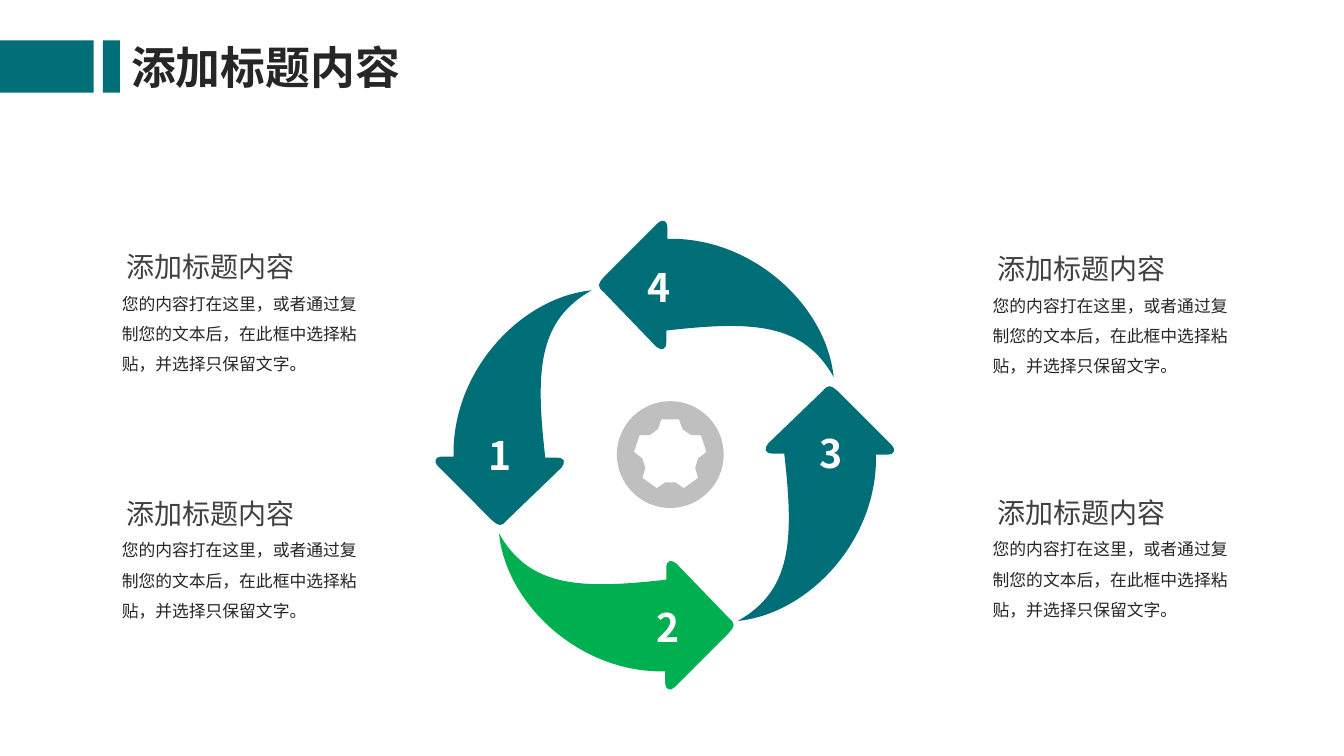
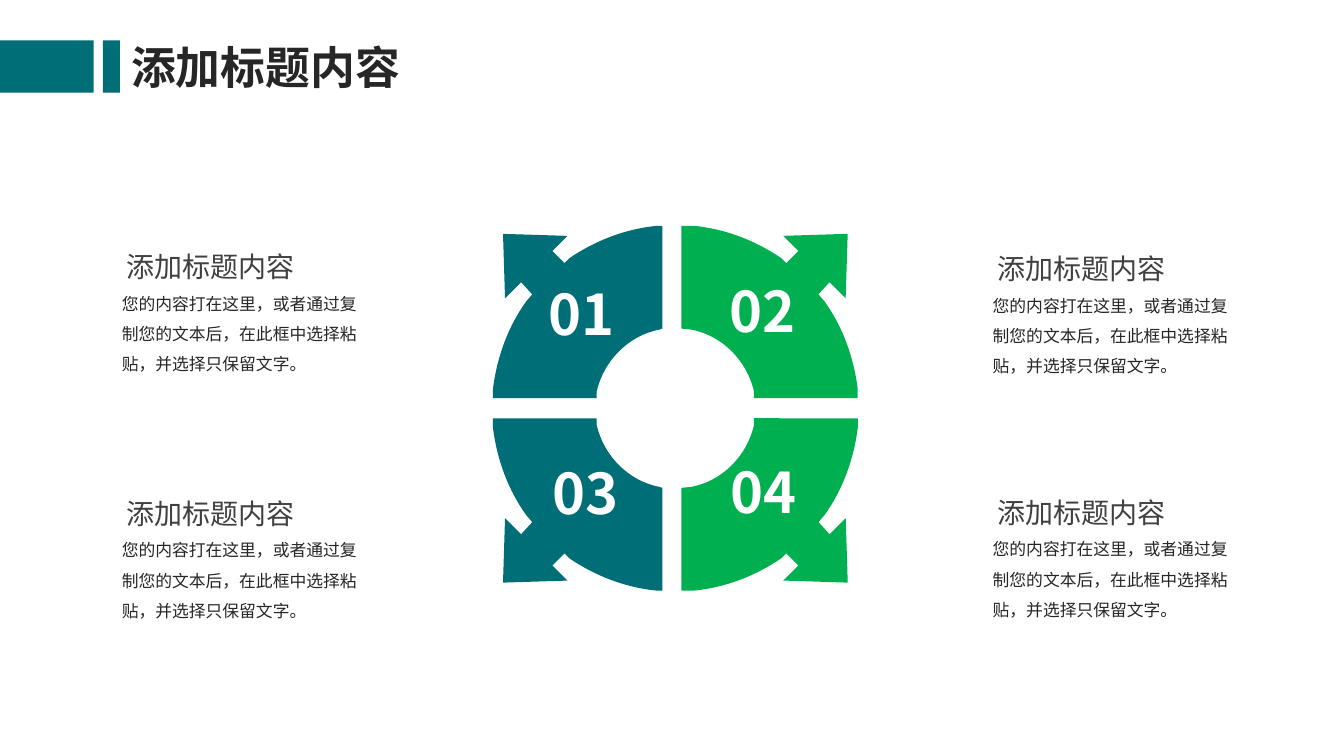
"""Build two four-part cycle slides: swirling arrows and a quartered ring."""
from math import cos, radians, sin

from lxml import etree
from pptx import Presentation
from pptx.dml.color import RGBColor
from pptx.enum.shapes import MSO_SHAPE
from pptx.enum.text import MSO_ANCHOR, PP_ALIGN
from pptx.oxml.ns import qn
from pptx.util import Inches, Pt

COLORS = {"teal": "006E77", "green": "00B050", "gray": "BFBFBF",
          "title": "262626", "heading": "404040", "white": "FFFFFF"}
CJK_FONT, BODY_FONT = "Noto Sans CJK JP", "Arial"

TITLE = "添加标题内容"
HEADING = "添加标题内容"
BODY = "您的内容打在这里，或者通过复制您的文本后，在此框中选择粘贴，并选择只保留文字。"
BANDS = [(0, 0.93), (1.02, 0.17)]
NOTES = [(1.11, 2.26), (1.11, 4.71), (9.75, 2.28), (9.75, 4.7)]

# A step with one point is a line; a step with three points is a curve.
SWIRL = [
    [(0, 0)],
    [(-0.7, 0.07), (-1.39, 0.8), (-1.37, 1.65)],
    [(-1.49, 1.65)],
    [(-1.55, 1.65), (-1.57, 1.7), (-1.53, 1.74)],
    [(-0.99, 2.28)],
    [(-0.92, 2.34), (-0.9, 2.35), (-0.84, 2.28)],
    [(-0.3, 1.76)],
    [(-0.26, 1.71), (-0.26, 1.66), (-0.35, 1.66)],
    [(-0.46, 1.66)],
    [(-0.56, 0.79), (-0.53, 0.3), (0, 0)],
]
SWIRLS = [
    ("4", "teal", (8.27, 3.74), 90, (6.22, 2.56)),
    ("1", "teal", (5.87, 2.88), 0, (4.64, 4.23)),
    ("2", "green", (4.95, 5.29), 270, (6.31, 5.94)),
    ("3", "teal", (7.32, 6.16), 180, (7.92, 4.21)),
]
GEAR_CENTER, GEAR_RADIUS, GEAR_TEETH = (6.65, 4.51), 0.53, 5
TOOTH = [(-14, 0.36), (14, 0.36), (26, 0.28), (46, 0.28)]
ARC_HANDLE = 0.55

RING_CENTER = (6.7, 4.05)
QUARTER = [
    [(0.18, 1.81)],
    [(0.5, 1.78), (0.8, 1.66), (1.05, 1.49)],
    [(1.1, 1.44)], [(1.22, 1.56)], [(1.07, 1.71)], [(1.71, 1.73)],
    [(1.69, 1.09)], [(1.53, 1.25)], [(1.42, 1.13)], [(1.48, 1.06)],
    [(1.66, 0.81), (1.77, 0.51), (1.81, 0.19)],
    [(1.81, 0.1)], [(0.78, 0.1)], [(0.78, 0.17)],
    [(0.71, 0.47), (0.47, 0.72), (0.16, 0.78)],
]
QUARTERS = [
    ("01", "teal", -1, -1, 0.13, 225, (5.29, 2.72)),
    ("02", "green", 1, -1, 0.06, 315, (7.09, 2.69)),
    ("03", "teal", -1, 1, 0.13, 135, (5.33, 4.5)),
    ("04", "green", 1, 1, 0.06, 45, (7.1, 4.49)),
]


def paint(shape, color):
    shape.shadow.inherit = False
    shape.fill.solid()
    shape.fill.fore_color.rgb = RGBColor.from_string(COLORS[color])
    shape.line.fill.background()


def rotate(point, angle):
    (x, y), c, s = point, cos(radians(angle)), sin(radians(angle))
    return x * c - y * s, x * s + y * c


def polar(angle, radius):
    return rotate((0, -radius), angle)


def add_outline(page, contours, color, anchor, turn=0):
    """Draw contours of steps, unturned and measured from the anchor, then turn the shape."""
    ends = [step[-1] for steps in contours for step in steps]
    middle = tuple((min(axis) + max(axis)) / 2 for axis in zip(*ends))
    shift = rotate(middle, turn)
    dx, dy = (anchor[i] + shift[i] - middle[i] for i in (0, 1))
    placed = [[[(Inches(x + dx), Inches(y + dy)) for x, y in step] for step in steps]
              for steps in contours]
    builder = page.shapes.build_freeform(*placed[0][0][-1], scale=1.0)
    for index, steps in enumerate(placed):
        if index:
            builder.move_to(*steps[0][-1])
        builder.add_line_segments([step[-1] for step in steps[1:]], close=True)
    shape = builder.convert_to_shape()
    later_steps = [step for steps in placed for step in steps[1:]]
    for line, step in zip(list(shape._element.iter(qn("a:lnTo"))), later_steps):
        if len(step) == 3:
            curve = etree.Element(qn("a:cubicBezTo"))
            for x, y in step:
                etree.SubElement(curve, qn("a:pt"), x=str(x - shape.left), y=str(y - shape.top))
            line.getparent().replace(line, curve)
    shape.rotation = turn
    paint(shape, color)


def add_span(para, text, size, color, font=CJK_FONT, bold=False):
    span = para.add_run()
    span.text = text
    span.font.size, span.font.bold, span.font.name = Pt(size), bold, font
    span.font.color.rgb = RGBColor.from_string(COLORS[color])


def add_box(page, place, width, height):
    box = page.shapes.add_textbox(*map(Inches, (*place, width, height)))
    box.text_frame.word_wrap = True
    return box.text_frame


def add_number(page, text, place, width, height, size):
    para = add_box(page, place, width, height).paragraphs[0]
    para.alignment = PP_ALIGN.CENTER
    add_span(para, text, size, "white", bold=True)


def add_notes(page):
    for place in NOTES:
        frame = add_box(page, place, 2.64, 1.51)
        head, body = frame.paragraphs[0], frame.add_paragraph()
        head.line_spacing = body.line_spacing = 1.5
        head._p.get_or_add_pPr().set("marL", str(Inches(0.05)))
        add_span(head, HEADING, 20, "heading")
        add_span(body, BODY, 12, "title", BODY_FONT)


def add_page(deck):
    page = deck.slides.add_slide(deck.slide_layouts[5])
    title = page.shapes.title
    title.left, title.top, title.width, title.height = map(Inches, (1.2, 0.34, 2.87, 0.64))
    title.text_frame.vertical_anchor = MSO_ANCHOR.TOP
    title.text_frame.word_wrap = False
    para = title.text_frame.paragraphs[0]
    para.alignment = PP_ALIGN.LEFT
    add_span(para, TITLE, 32, "title", bold=True)
    for left, width in BANDS:
        band = page.shapes.add_shape(MSO_SHAPE.RECTANGLE,
                                     *map(Inches, (left, 0.4, width, 0.52)))
        paint(band, "teal")
    return page


def add_gear(page):
    radius, handle = GEAR_RADIUS, GEAR_RADIUS * ARC_HANDLE
    arc = [(handle, -radius), (radius, -handle), (radius, 0)]
    rim = [[(0, -radius)]]
    rim += [[rotate(point, turn) for point in arc] for turn in range(0, 360, 90)]
    hole = [[polar(tooth * 360 / GEAR_TEETH + angle, reach)]
            for tooth in range(GEAR_TEETH) for angle, reach in TOOTH]
    add_outline(page, [rim, hole], "gray", GEAR_CENTER)


def add_swirls(page):
    for _, color, tail, turn, _ in SWIRLS:
        add_outline(page, [SWIRL], color, tail, turn)
    for number, _, _, _, place in sorted(SWIRLS):
        add_number(page, number, place, 0.64, 0.57, 28)


def add_quarters(page):
    for _, color, across, down, gap, turn, _ in QUARTERS:
        steps = [[(gap, 1.81)], *QUARTER, [(gap, 0.79)]]
        unturned = [[rotate((across * x, down * y), -turn) for x, y in step]
                    for step in steps]
        add_outline(page, [unturned], color, RING_CENTER, turn)


def main():
    deck = Presentation()
    deck.slide_width, deck.slide_height = Inches(40 / 3), Inches(7.5)
    swirl_page = add_page(deck)
    add_swirls(swirl_page)
    add_gear(swirl_page)
    add_notes(swirl_page)
    ring_page = add_page(deck)
    add_quarters(ring_page)
    add_notes(ring_page)
    for number, *_, place in QUARTERS:
        add_number(ring_page, number, place, 0.95, 0.77, 40)
    deck.save("out.pptx")


if __name__ == "__main__":
    main()
